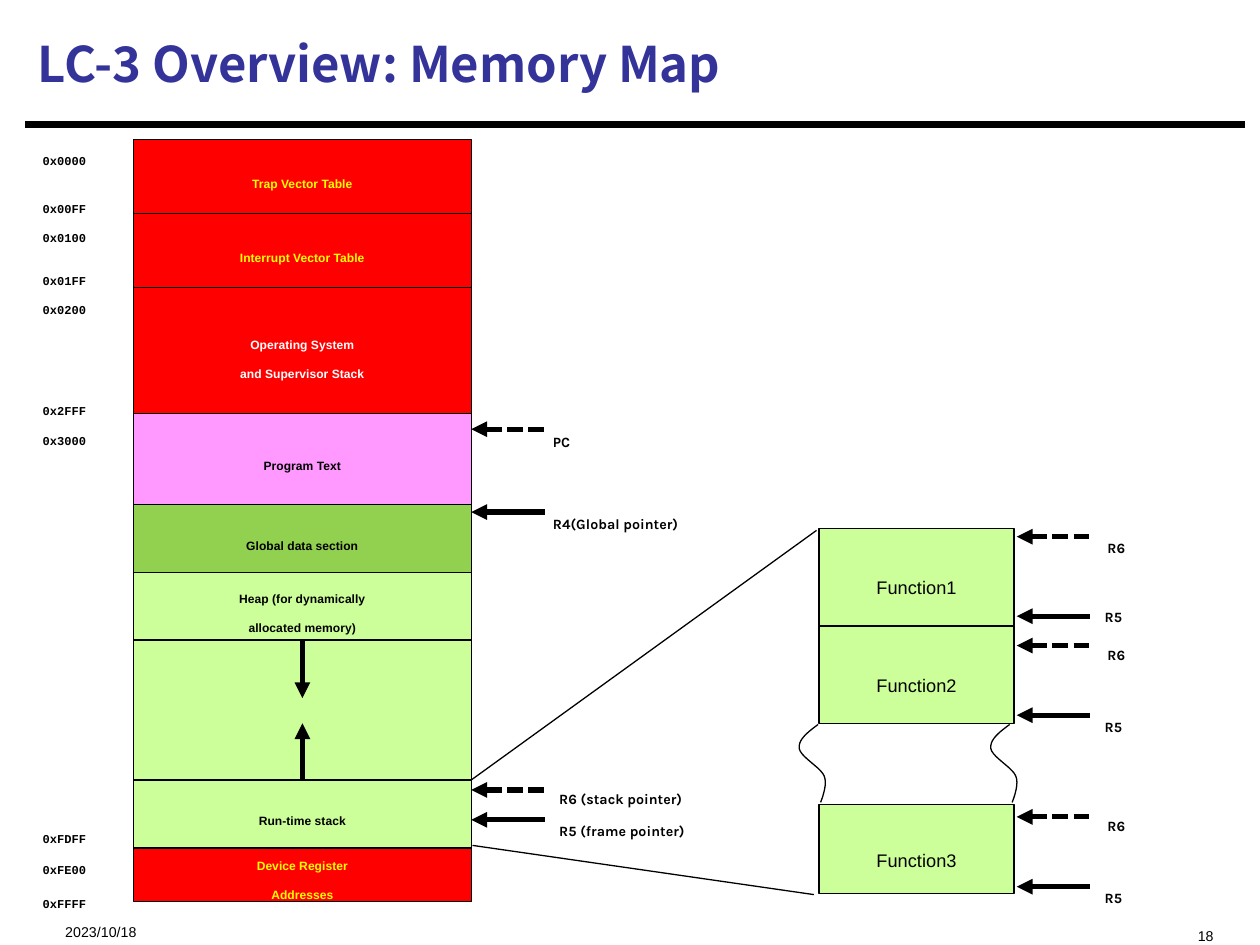
from lxml.etree import SubElement
from pptx import Presentation
from pptx.dml.color import RGBColor
from pptx.enum.dml import MSO_LINE
from pptx.enum.shapes import MSO_CONNECTOR, MSO_SHAPE
from pptx.enum.text import MSO_ANCHOR, PP_ALIGN
from pptx.oxml.ns import qn
from pptx.util import Pt

COLORS = {
    "title": "333399", "black": "000000", "white": "FFFFFF", "yellow": "FFFF00",
    "system": "FF0000", "program": "FF99FF", "global": "92D050", "stack": "CCFF99",
}
MAP_LEFT, MAP_WIDTH = 76.3, 193
MAP_RIGHT = MAP_LEFT + MAP_WIDTH
FRAME_LEFT, FRAME_WIDTH = 468, 111.5
POINTER_LEFT, POINTER_LENGTH = 581, 42

# Text, top, height, fill, text colour; later regions overlap earlier ones
REGIONS = [
    ("", 362.2, 83.5, "stack", "black"),
    ("Device Register\nAddresses", 482.6, 32.4, "system", "yellow"),
    ("Trap Vector Table", 79.9, 42.2, "system", "yellow"),
    ("Interrupt Vector Table", 122.1, 42.2, "system", "yellow"),
    ("Operating System\nand Supervisor Stack", 164.3, 74, "system", "white"),
    ("Run-time stack", 445.7, 38.9, "stack", "black"),
    ("Program Text", 236.2, 52, "program", "black"),
    ("Global data section", 288.2, 38.8, "global", "black"),
    ("Heap (for dynamically\nallocated memory)", 327, 38.8, "stack", "black"),
]
ADDRESSES = [
    ("0x0000", 76.3), ("0x00FF", 103.2), ("0x0100", 120.2), ("0x01FF", 144.6),
    ("0x0200", 161.3), ("0x2FFF", 218.9), ("0x3000", 236.2), ("0xFDFF", 463.7),
    ("0xFE00", 481), ("0xFFFF", 500.4),
]
# Text, label left, label top, arrow height, dotted
MAP_POINTERS = [
    ("PC", 308.9, 234.7, 245.3, True),
    ("R4(Global pointer)", 308.9, 281.5, 292.6, False),
    ("R6 (stack pointer)", 312.5, 438.5, 451.4, True),
    ("R5 (frame pointer)", 312.5, 457.2, 468.5, False),
]
# Text, top, height, then arrow height and label top for R6 and for R5
FRAMES = [
    ("Function1", 301.9, 55.6, (306.7, 295.2), (352.1, 334.8)),
    ("Function2", 357.8, 55.6, (368.9, 356.4), (408.7, 397.4)),
    ("Function3", 459.9, 50.9, (466.8, 454.3), (506.7, 495.4)),
]
# Cubic segments of the break mark, relative to the corner of a frame
BREAK_MARK = [
    [(-.5, 414), (-6.3, 418.3), (-12, 422.6), (-11.3, 427.7)],
    [(-11.3, 427.7), (-10.5, 432.7), (1, 438.5), (3, 443.5)],
    [(3, 443.5), (5.2, 448.6), (.9, 458.5), (.9, 458.5)],
]


def rgb(color):
    return RGBColor.from_string(COLORS[color])


def set_text(shape, text, size, font="Arial", color="black", bold=False,
             align=PP_ALIGN.LEFT, anchor=MSO_ANCHOR.TOP, wrap=False,
             lowered=True, space_before=0):
    frame = shape.text_frame
    frame.text = text
    frame.word_wrap = wrap
    frame.vertical_anchor = anchor
    for paragraph in frame.paragraphs:
        paragraph.alignment = align
        paragraph.space_before = Pt(space_before)
        for run in paragraph.runs:
            run.font.size, run.font.name, run.font.bold = Pt(size), font, bold
            run.font.color.rgb = rgb(color)
            if lowered:
                run.font._element.set("baseline", "-25000")


def add_label(slide, text, left, top, width, height, **text_format):
    label = slide.shapes.add_textbox(Pt(left), Pt(top), Pt(width), Pt(height))
    set_text(label, text, **text_format)


def add_box(slide, left, top, width, height, fill):
    box = slide.shapes.add_shape(MSO_SHAPE.RECTANGLE, Pt(left), Pt(top), Pt(width), Pt(height))
    box.shadow.inherit = False
    box.fill.solid()
    box.fill.fore_color.rgb = rgb(fill)
    box.line.color.rgb = rgb("black")
    box.line.width = Pt(0.75)
    return box


def add_line(slide, start, end, weight=0.75, dotted=False, arrow=None):
    """Draw a line; arrow is "headEnd" (at start) or "tailEnd" (at end)."""
    line = slide.shapes.add_connector(MSO_CONNECTOR.STRAIGHT, *map(Pt, start + end))
    line.line.color.rgb = rgb("black")
    line.line.width = Pt(weight)
    if dotted:
        line.line.dash_style = MSO_LINE.SQUARE_DOT
    if arrow:
        SubElement(line.line._get_or_add_ln(), qn("a:" + arrow), type="triangle")
    SubElement(line._element.spPr, qn("a:effectLst"))


def add_pointer(slide, text, tip, label_corner, label_width, dotted):
    add_line(slide, tip, (tip[0] + POINTER_LENGTH, tip[1]), 3, dotted, "headEnd")
    add_label(slide, text, *label_corner, label_width, 24.5, size=14, font="Karla", bold=True)


def cubic_point(controls, t):
    weights = ((1 - t) ** 3, 3 * t * (1 - t) ** 2, 3 * t ** 2 * (1 - t), t ** 3)
    return tuple(sum(w * p[axis] for w, p in zip(weights, controls)) for axis in (0, 1))


def add_break_mark(slide, left, steps=10):
    points = [cubic_point(segment, step / steps)
              for segment in BREAK_MARK for step in range(steps + 1)]
    points = [(Pt(left + x), Pt(y)) for x, y in points]
    builder = slide.shapes.build_freeform(*points[0])
    builder.add_line_segments(points[1:], close=False)
    mark = builder.convert_to_shape()
    mark.shadow.inherit = False
    mark.fill.background()
    mark.line.color.rgb = rgb("black")
    mark.line.width = Pt(0.75)


def add_header_and_footer(slide):
    title = slide.shapes.title
    title.left, title.top, title.width, title.height = Pt(14.4), Pt(5.8), Pt(696), Pt(60.5)
    set_text(title, "LC-3 Overview: Memory Map", 28, "Noto Sans CJK SC", "title", True,
             anchor=MSO_ANCHOR.MIDDLE, wrap=True, lowered=False)
    add_line(slide, (14.4, 71.3), (711.4, 71.3), 3.75)
    add_label(slide, "2023/10/18", 30.2, 514.8, 180, 19.4, size=14, wrap=True)
    add_label(slide, "18", 484.6, 517, 216, 19.4, size=14, align=PP_ALIGN.RIGHT, wrap=True)


def add_memory_map(slide):
    for text, top, height, fill, color in REGIONS:
        region = add_box(slide, MAP_LEFT, top, MAP_WIDTH, height, fill)
        if text:
            set_text(region, text, 12, color=color, bold=True, align=PP_ALIGN.CENTER,
                     anchor=MSO_ANCHOR.MIDDLE)
    for address, top in ADDRESSES:
        add_label(slide, address, 17.2, top, 58.3, 21.6, size=12, font="Courier New", bold=True)
    middle = MAP_LEFT + MAP_WIDTH / 2
    for start, end in ((366.5, 398.9), (445.7, 413.3)):
        add_line(slide, (middle, start), (middle, end), 3, arrow="tailEnd")
    for text, left, top, height, dotted in MAP_POINTERS:
        width = 31 if text == "PC" else 124
        add_pointer(slide, text, (MAP_RIGHT, height), (left, top), width, dotted)


def add_stack_frames(slide):
    for text, top, height, stack_pointer, frame_pointer in FRAMES:
        frame = add_box(slide, FRAME_LEFT, top, FRAME_WIDTH, height, "stack")
        set_text(frame, text, 18, align=PP_ALIGN.CENTER, anchor=MSO_ANCHOR.MIDDLE, wrap=True)
        for name, (tip, label_top), left, dotted in (("R6", stack_pointer, 625.7, True),
                                                     ("R5", frame_pointer, 624.2, False)):
            add_pointer(slide, name, (POINTER_LEFT, tip), (left, label_top), 35.3, dotted)
    for left in (FRAME_LEFT, FRAME_LEFT + FRAME_WIDTH - 2):
        add_break_mark(slide, left)
    add_line(slide, (MAP_RIGHT, 445.7), (466.6, 303.1))
    add_line(slide, (270, 483.1), (465.1, 511.2))


def main():
    presentation = Presentation()
    presentation.slide_width, presentation.slide_height = Pt(720), Pt(540)
    slide = presentation.slides.add_slide(presentation.slide_layouts[5])
    add_header_and_footer(slide)
    add_memory_map(slide)
    add_stack_frames(slide)
    presentation.save("out.pptx")


if __name__ == "__main__":
    main()
